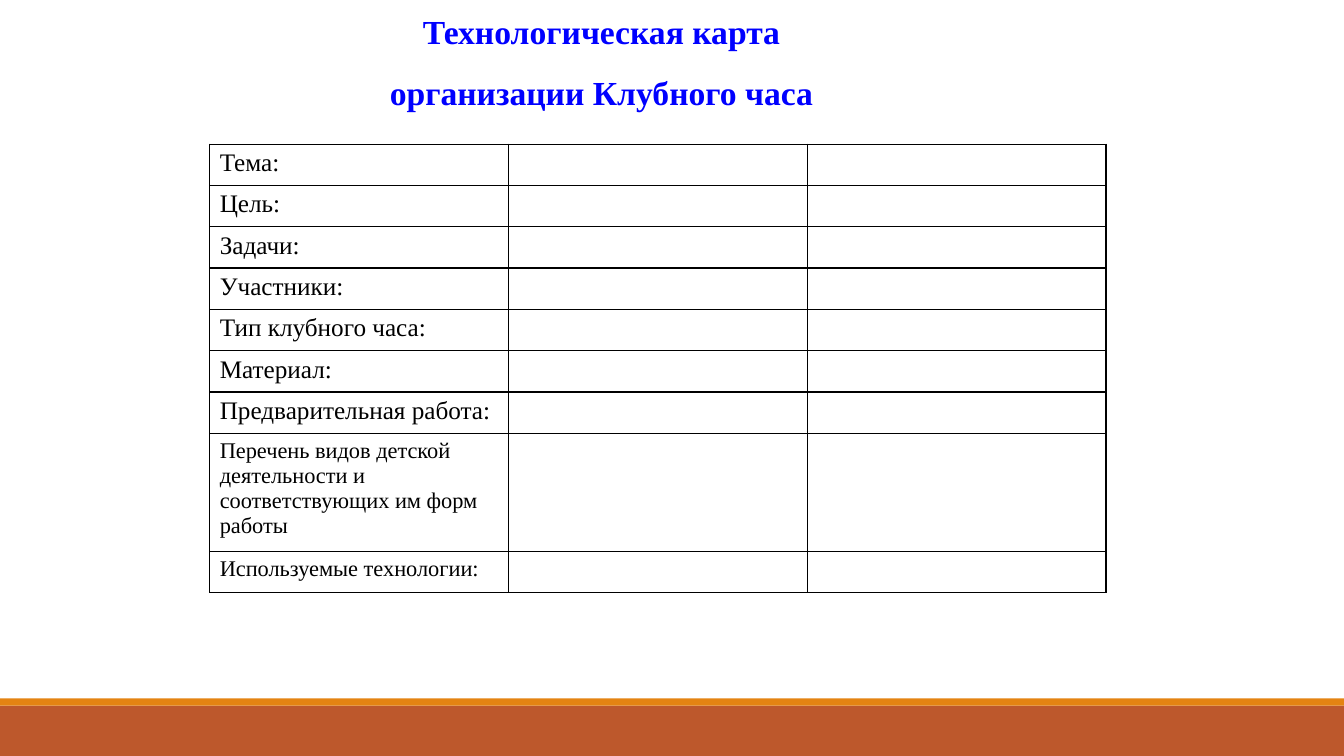
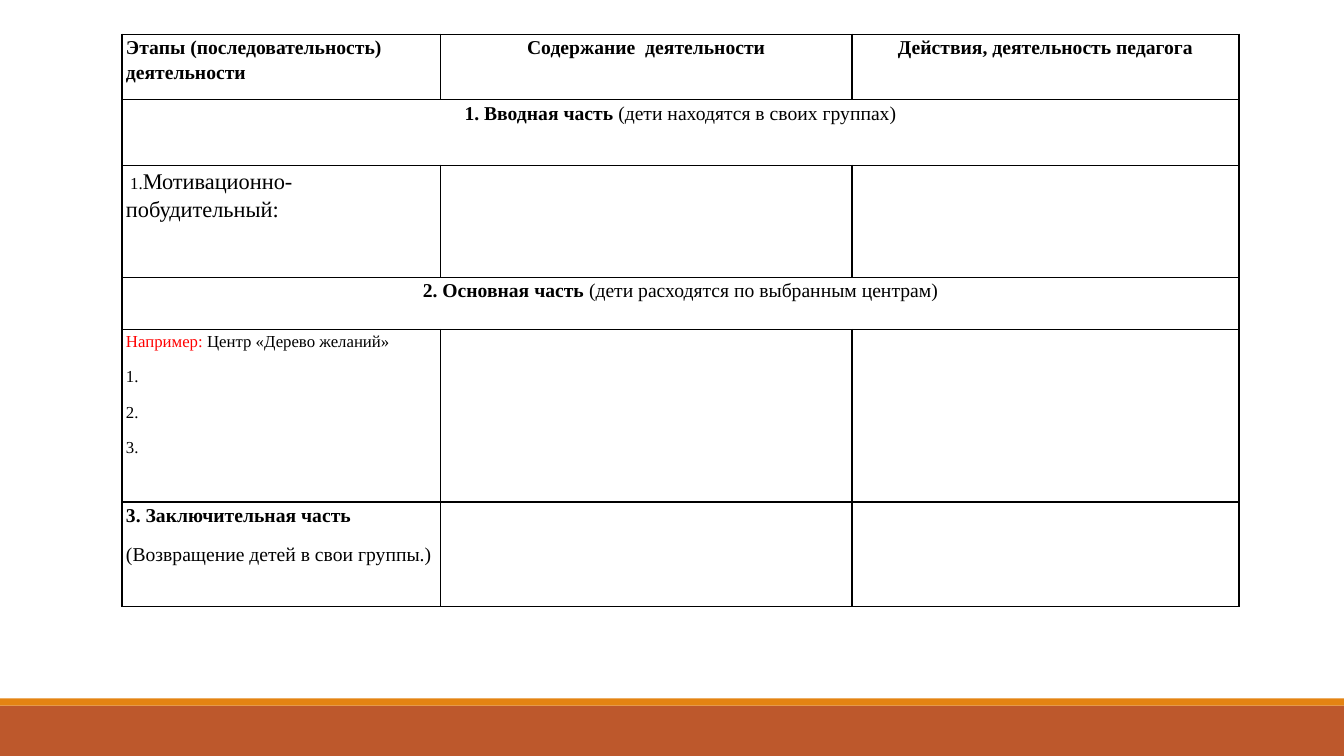
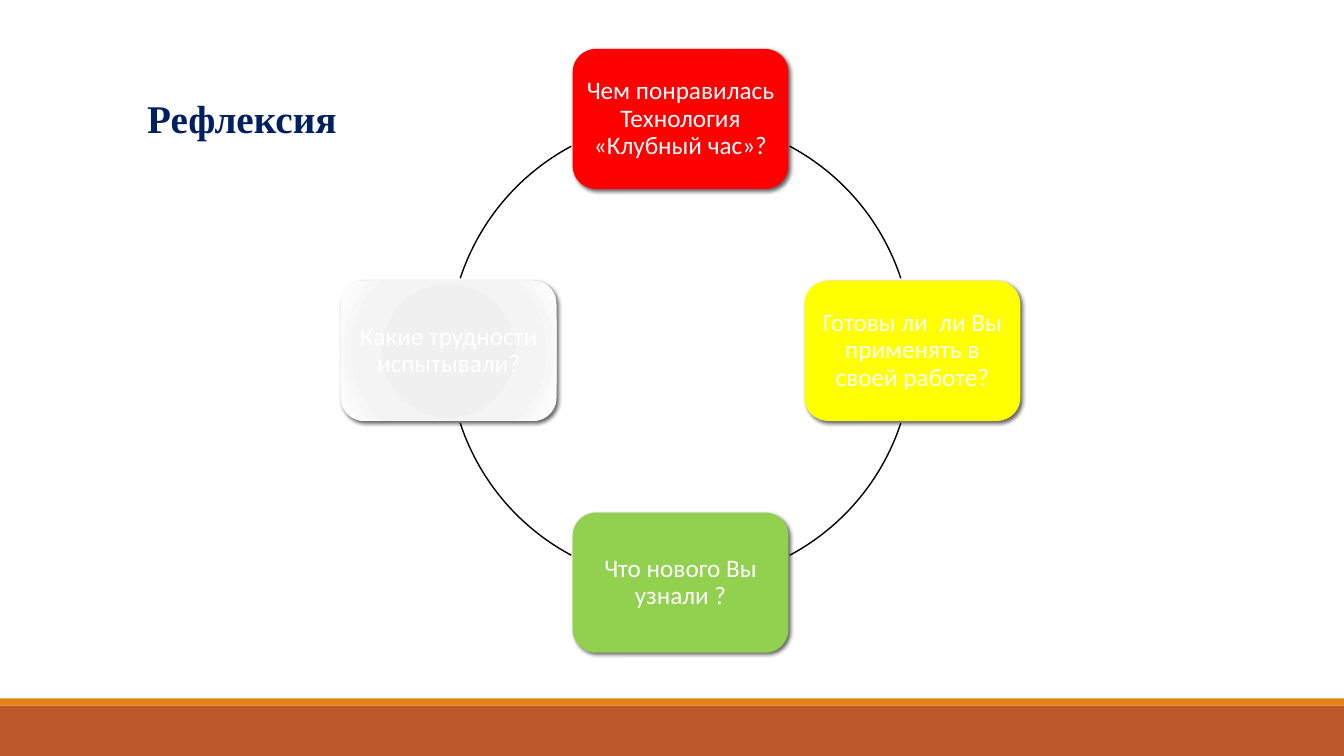
from lxml import etree
from pptx import Presentation
from pptx.dml.color import RGBColor
from pptx.enum.shapes import MSO_SHAPE
from pptx.enum.text import MSO_ANCHOR, MSO_AUTO_SIZE, PP_ALIGN
from pptx.oxml.ns import qn
from pptx.util import Inches, Pt

RECTANGLE = MSO_SHAPE.RECTANGLE
ROUNDED = MSO_SHAPE.ROUNDED_RECTANGLE
ARC = MSO_SHAPE.ARC
LEFT, CENTER = PP_ALIGN.LEFT, PP_ALIGN.CENTER
TOP, MIDDLE = MSO_ANCHOR.TOP, MSO_ANCHOR.MIDDLE
NO_AUTOFIT = MSO_AUTO_SIZE.NONE

WIDTH, HEIGHT = 13.33, 7.5
SERIF, SANS = "Times New Roman", "Calibri"
BLACK, WHITE, RED = "000000", "FFFFFF", "FF0000"
DRAWING = "http://schemas.openxmlformats.org/drawingml/2006/main"


def set_font(font, size, color=BLACK, bold=False, name=SERIF):
    font.name = name
    font.size = Pt(size)
    font.bold = bold
    font.color.rgb = RGBColor.from_string(color)


def set_title(slide, lines, box, size, color, align, spacing, after):
    title = slide.shapes.title
    title.left, title.top, title.width, title.height = [Inches(n) for n in box]
    frame = title.text_frame
    frame.text = "\n".join(lines)
    frame.vertical_anchor = TOP
    frame.auto_size = NO_AUTOFIT
    frame.word_wrap = True
    for paragraph in frame.paragraphs:
        paragraph.alignment = align
        paragraph.line_spacing = spacing
        paragraph.space_after = Pt(after)
        set_font(paragraph.font, size, color, True)


presentation = Presentation()
presentation.slide_width = Inches(WIDTH)
presentation.slide_height = Inches(HEIGHT)
title_only, blank = presentation.slide_layouts[5], presentation.slide_layouts[6]
card_slide = presentation.slides.add_slide(title_only)
stages_slide = presentation.slides.add_slide(blank)
reflection_slide = presentation.slides.add_slide(title_only)

master_tree = presentation.slide_master.shapes._spTree
for top, height, color in [(7, 0.5, "BD582C"), (6.93, 0.07, "E48312")]:
    band = card_slide.shapes.add_shape(
        RECTANGLE, 0, Inches(top), Inches(WIDTH), Inches(height))
    band.shadow.inherit = False
    band.fill.solid()
    band.fill.fore_color.rgb = RGBColor.from_string(color)
    band.line.fill.background()
    master_tree.append(band._element)

set_title(card_slide, ["Технологическая карта", "организации Клубного часа"],
          (2.63, 0, 6.67, 1.17), 24, "0000FF", CENTER, 1.15, 10)
set_title(reflection_slide, ["Рефлексия"],
          (1.36, 0.89, 2.1, 0.57), 28, "002060", LEFT, 1, 0)

labels = ["Тема:", "Цель:", "Задачи:", "Участники:", "Тип клубного часа:",
          "Материал:", "Предварительная работа:",
          "Перечень видов детской деятельности и соответствующих им форм работы",
          "Используемые технологии:"]
row_heights = [0.41] * 7 + [1.17, 0.41]
card_table = card_slide.shapes.add_table(
    len(labels), 3, Inches(2.08), Inches(1.43),
    Inches(8.89), Inches(sum(row_heights))).table
for index, (label, height) in enumerate(zip(labels, row_heights)):
    card_table.rows[index].height = Inches(height)
    cell = card_table.cell(index, 0)
    cell.text = label
    set_font(cell.text_frame.paragraphs[0].font, 18 if index < 7 else 16)

column_widths = [3.16, 4.08, 3.84]
stage_heights = [0.65, 0.65, 1.11, 0.52, 1.71, 1.04]
stage_cells = [
    (0, 0, LEFT, [[("Этапы (последовательность) деятельности", 14, BLACK, True)]]),
    (0, 1, CENTER, [[("Содержание  деятельности", 14, BLACK, True)]]),
    (0, 2, CENTER, [[("Действия, деятельность педагога", 14, BLACK, True)]]),
    (1, 0, CENTER, [[("1. Вводная часть ", 14, BLACK, True),
                     ("(дети находятся в своих группах)", 14, BLACK, False)]]),
    (2, 0, LEFT, [[(" 1.", 12, BLACK, False),
                   ("Мотивационно-побудительный:", 16, BLACK, False)]]),
    (3, 0, CENTER, [[("2. Основная часть ", 14, BLACK, True),
                     ("(дети расходятся по выбранным центрам)", 14, BLACK, False)]]),
    (4, 0, LEFT, [[("Например: ", 12, RED, False),
                   ("Центр «Дерево желаний»", 12, BLACK, False)],
                  [("1.", 12, BLACK, False)],
                  [("2.", 12, BLACK, False)],
                  [("3.", 12, BLACK, False)]]),
    (5, 0, LEFT, [[("3. Заключительная часть", 14, BLACK, True)],
                  [("(Возвращение детей в свои группы.)", 14, BLACK, False)]]),
]
stages_table = stages_slide.shapes.add_table(
    len(stage_heights), 3, Inches(1.21), Inches(0.34),
    Inches(sum(column_widths)), Inches(sum(stage_heights))).table
for column, width in zip(stages_table.columns, column_widths):
    column.width = Inches(width)
for row, height in zip(stages_table.rows, stage_heights):
    row.height = Inches(height)
for part_row in (1, 3):
    stages_table.cell(part_row, 0).merge(stages_table.cell(part_row, 2))
for row, column, align, paragraphs in stage_cells:
    cell = stages_table.cell(row, column)
    cell.margin_left = cell.margin_right = Inches(0.04)
    cell.margin_top = cell.margin_bottom = 0
    for index, runs in enumerate(paragraphs):
        frame = cell.text_frame
        paragraph = frame.paragraphs[0] if index == 0 else frame.add_paragraph()
        paragraph.alignment = align
        paragraph.line_spacing = 1.15
        paragraph.space_after = Pt(10)
        for text, size, color, bold in runs:
            run = paragraph.add_run()
            run.text = text
            if len(runs) > 1:
                set_font(run.font, size, color, bold)
        if len(runs) == 1:
            set_font(paragraph.font, size, color, bold)

for table in (card_table, stages_table):
    table.first_row = False
    table.horz_banding = False
    for cell in table.iter_cells():
        properties = cell._tc.get_or_add_tcPr()
        for side in ("lnL", "lnR", "lnT", "lnB"):
            border = etree.SubElement(properties, qn("a:" + side), w=str(Pt(1)))
            solid = etree.SubElement(border, qn("a:solidFill"))
            etree.SubElement(solid, qn("a:srgbClr"), val=BLACK)
        cell.fill.background()

center_x, center_y, radius = 6.75, 3.48, 2.3
card_width, card_height = 2.14, 1.39
for start, end in [(18.2, 61.9), (118.1, 161.8), (198.2, 241.9), (298.1, 341.8)]:
    arc = reflection_slide.shapes.add_shape(
        ARC, Inches(center_x - radius), Inches(center_y - radius),
        Inches(2 * radius), Inches(2 * radius))
    arc.adjustments[0] = start * 0.6
    arc.adjustments[1] = end * 0.6
    arc.shadow.inherit = False
    arc.fill.background()
    arc.line.color.rgb = RGBColor.from_string(BLACK)
    arc.line.width = Pt(1)

gradient_xml = f'<a:gradFill xmlns:a="{DRAWING}" rotWithShape="1"><a:gsLst>'
for position, color in [(0, "EEEEEE"), (34, "F0F0F0"), (70, "F4F4F4"), (100, WHITE)]:
    gradient_xml += f'<a:gs pos="{position * 1000}"><a:srgbClr val="{color}"/></a:gs>'
gradient_xml += ('</a:gsLst><a:path path="circle"><a:fillToRect l="50000" t="50000" '
                 'r="50000" b="50000"/></a:path></a:gradFill>')
shadow_xml = (f'<a:outerShdw xmlns:a="{DRAWING}" blurRad="{Pt(3)}" dist="{Pt(2)}" '
              f'dir="{45 * 60000}" algn="ctr" rotWithShape="0"><a:srgbClr val="{BLACK}">'
              '<a:alpha val="60000"/></a:srgbClr></a:outerShdw>')

questions = [
    ("Чем понравилась Технология «Клубный час»?", RED, 0, -1),
    ("Готовы ли  ли Вы применять в своей работе?", "FFFF00", 1, 0),
    ("Что нового Вы узнали ?", "92D050", 0, 1),
    ("Какие трудности испытывали?", None, -1, 0),
]
for text, color, across, down in questions:
    card = reflection_slide.shapes.add_shape(
        ROUNDED, Inches(center_x + across * radius - card_width / 2),
        Inches(center_y + down * radius - card_height / 2),
        Inches(card_width), Inches(card_height))
    card.line.fill.background()
    card.shadow.inherit = False
    card_properties = card._element.spPr
    card_properties.find(qn("a:effectLst")).append(etree.fromstring(shadow_xml))
    if color:
        card.fill.solid()
        card.fill.fore_color.rgb = RGBColor.from_string(color)
    else:
        card.fill.gradient()
        card_properties.replace(card_properties.find(qn("a:gradFill")),
                                etree.fromstring(gradient_xml))
    frame = card.text_frame
    frame.text = text
    frame.word_wrap = True
    frame.vertical_anchor = MIDDLE
    frame.margin_left = frame.margin_right = Inches(0.07)
    frame.margin_top = frame.margin_bottom = Inches(0.07)
    paragraph = frame.paragraphs[0]
    paragraph.alignment = CENTER
    paragraph.line_spacing = 0.9
    set_font(paragraph.font, 18, WHITE, False, SANS)

presentation.save("out.pptx")
